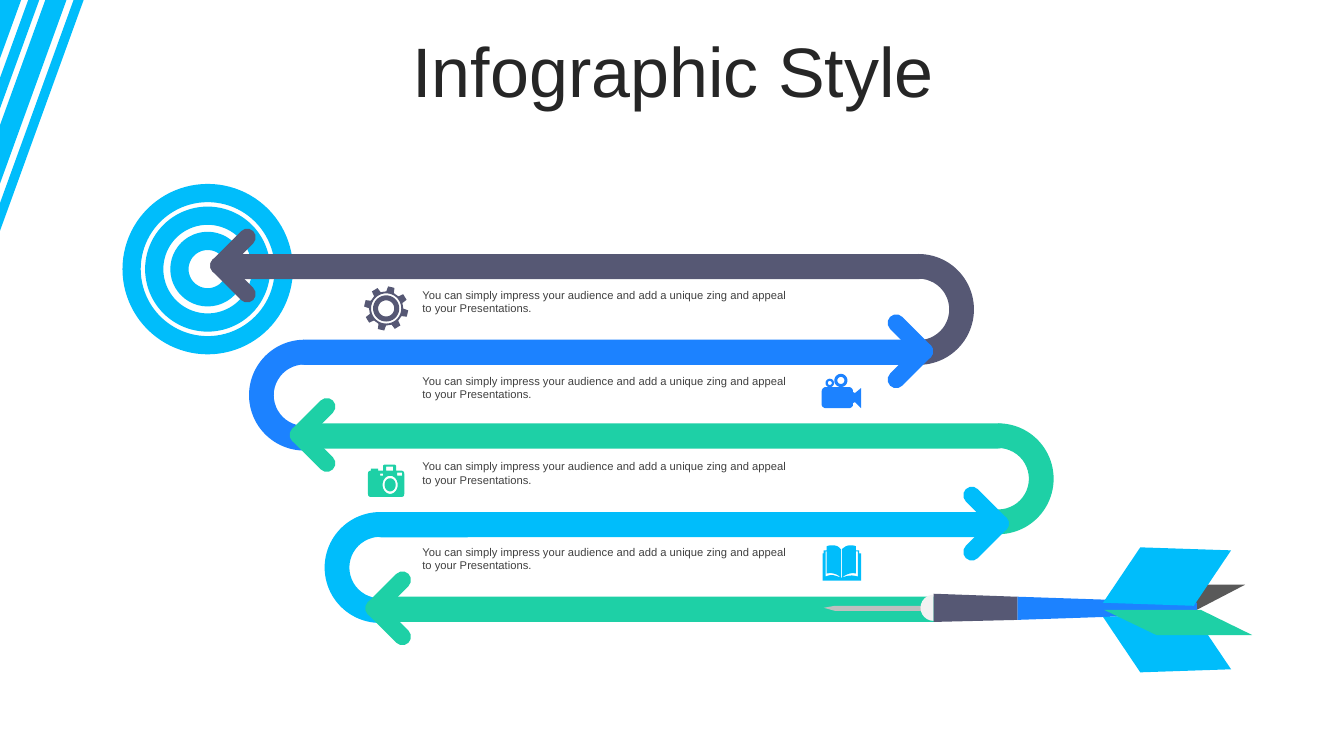
import math

import pptx
import pptx.util
from pptx.dml.color import RGBColor
from pptx.enum.shapes import MSO_SHAPE
from pptx.enum.text import MSO_ANCHOR, PP_ALIGN

COLORS = {
    "sky": "00BDFB", "blue": "1C82FF", "green": "1ED0A6", "slate": "565874",
    "grey": "595959", "silver": "BFBFBF", "pale": "F2F2F2", "white": "FFFFFF",
    "title": "262626", "body": "404040",
}
CAPTION = ("You can simply impress your audience and add a unique zing "
           "and appeal to your Presentations.")
BAR = 0.25
BEND = 1.1
# colour, tip x, tail x, top y, direction of the arrow, has a bend at its tail
RIBBONS = [
    ("slate", 2.14, 9.23, 2.52, -1, True),
    ("blue", 9.2, 2.9, 3.37, 1, True),
    ("green", 2.93, 10.02, 4.2, -1, True),
    ("sky", 9.95, 3.65, 5.08, 1, True),
    ("green", 3.68, 9.4, 5.92, -1, False),
]


def inch(value):
    return pptx.util.Inches(value)


def rgb(name):
    return RGBColor.from_string(COLORS[name])


def paint(sp, color, line=None, width=0):
    sp.shadow.inherit = False
    sp.fill.solid()
    sp.fill.fore_color.rgb = rgb(color)
    if line:
        sp.line.color.rgb = rgb(line)
        sp.line.width = pptx.util.Pt(width)
    else:
        sp.line.fill.background()


def preset(s, kind, box, color, rotation=0, adjust=(), **line):
    sp = s.shapes.add_shape(kind, *map(inch, box))
    sp.rotation = rotation
    for i, value in enumerate(adjust):
        sp.adjustments[i] = value
    paint(sp, color, **line)
    return sp


def flatten(points, steps=6):
    """Turn six-number cubic curves into short lines."""
    flat = []
    for pt in points:
        if len(pt) == 2:
            flat.append(pt)
            continue
        knots = [flat[-1], pt[:2], pt[2:4], pt[4:]]
        for i in range(1, steps + 1):
            t = i / steps
            weights = ((1 - t) ** 3, 3 * t * (1 - t) ** 2, 3 * t * t * (1 - t), t ** 3)
            flat.append(tuple(sum(w * k[axis] for w, k in zip(weights, knots))
                              for axis in (0, 1)))
    return flat


def outline(s, x, y, color, *contours):
    """Fill contours given in hundredths of an inch from x, y; inner ones are holes."""
    builder = None
    for contour in contours:
        pts = [(inch(x + px / 100), inch(y + py / 100)) for px, py in flatten(contour)]
        if builder is None:
            builder = s.shapes.build_freeform(*pts[0])
        else:
            builder.move_to(*pts[0])
        builder.add_line_segments(pts[1:], close=True)
    paint(builder.convert_to_shape(), color)


def polar(cx, cy, rx, ry, degrees):
    a = math.radians(degrees)
    return cx + rx * math.cos(a), cy + ry * math.sin(a)


def ring(cx, cy, rx, ry=None):
    return [polar(cx, cy, rx, ry or rx, a) for a in range(0, 360, 10)]


def rect(x, y, w, h):
    return [(x, y), (x + w, y), (x + w, y + h), (x, y + h)]


def write(tf, text, size, color, align=PP_ALIGN.LEFT, anchor=MSO_ANCHOR.TOP, spacing=1.0):
    tf.word_wrap = True
    tf.vertical_anchor = anchor
    p = tf.paragraphs[0]
    p.alignment = align
    p.line_spacing = spacing
    r = p.add_run()
    r.text = text
    r.font.size = pptx.util.Pt(size)
    r.font.name = "Arial"
    r.font.color.rgb = rgb(color)


def heading(s, x, y, w, h):
    sp = s.shapes.title
    sp.left, sp.top, sp.width, sp.height = map(inch, (x, y, w, h))
    write(sp.text_frame, "Infographic Style", 50, "title",
          align=PP_ALIGN.CENTER, anchor=MSO_ANCHOR.MIDDLE, spacing=0.8)


def corner_stripes(s, x, y, slope=2.76):
    bands = [(0, 21), (28, 39), (45, 66), (73, 83)]
    outline(s, x, y, "sky", *[
        [(a, 0), (b, 0), (0, b * slope), (0, a * slope)] for a, b in bands])


def target(s, cx, cy):
    for d in (1.51, 1.06, 0.56):
        preset(s, MSO_SHAPE.OVAL, (cx - d / 2, cy - d / 2, d, d), "white",
               line="sky", width=13)


def ribbon(s, color, tip, tail, top, direction, bend):
    if bend:
        left = tail + 0.12 * direction - BEND / 2
        preset(s, MSO_SHAPE.BLOCK_ARC, (left, top, BEND, BEND), color,
               rotation=-90 * direction % 360, adjust=(108, 0, 0.223))
    preset(s, MSO_SHAPE.ROUNDED_RECTANGLE,
           (min(tip, tail), top, abs(tip - tail), BAR), color, adjust=(0.5,))
    w, h = 0.17, 0.57
    cx, cy = tip - 0.17 * direction, top + BAR / 2 - 0.01
    for side in (-1, 1):
        preset(s, MSO_SHAPE.ROUNDED_RECTANGLE,
               (cx - w / 2, cy + 0.14 * side - h / 2, w, h), color,
               rotation=45 * side * direction % 360, adjust=(0.5,))


def gear(s, x, y):
    c = 21
    teeth = [polar(c, c, r, r, 45 * i - 76.5 + a) for i in range(8)
             for a, r in ((-13, 17), (-8.5, 22), (8.5, 22), (13, 17))]
    outline(s, x, y, "slate", teeth, *[ring(c, c, r) for r in (15, 13, 8)])


def movie_camera(s, x, y):
    body = [(4, 13), (27, 13), (29, 13, 31, 15, 31, 17), (31, 18), (33, 19), (39, 14),
            (39, 34), (33, 28), (31, 29), (31, 31), (31, 32, 29, 34, 27, 34), (4, 34),
            (2, 34, 0, 32, 0, 31), (0, 17), (0, 15, 2, 13, 4, 13)]
    outline(s, x, y, "blue", body, ring(8, 9, 4.2), ring(8, 9, 2),
            ring(19, 6.5, 6.5), ring(19, 6.5, 3.5))


def photo_camera(s, x, y):
    body = [(16, 0), (27, 0), (28, 1), (28, 6), (33, 6), (35, 6, 36, 7, 36, 9), (36, 29),
            (36, 31, 35, 32, 33, 32), (3, 32), (1, 32, 0, 31, 0, 29), (0, 9),
            (0, 7, 1, 6, 3, 6), (3, 4), (10, 4), (10, 6), (15, 6), (15, 1)]
    outline(s, x, y, "green", body, rect(12, 9, 3, 2), rect(29, 8, 5, 3),
            rect(18, 2, 7, 4), ring(22, 20, 7.5, 9), ring(22, 20, 5.5, 6.5))


def book(s, x, y):
    outline(s, x, y, "sky", [
        (18, 32), (19, 32), (25, 30, 28, 29, 35, 31), (35, 6), (33, 6), (33, 28),
        (29, 27, 24, 28, 19, 32), (19, 4), (22, 1, 24, 0, 28, 0), (29, 0, 31, 0, 33, 1),
        (33, 5), (36, 5), (36, 8), (38, 8), (38, 35), (0, 35), (0, 8), (1, 8), (1, 5),
        (4, 5), (4, 1), (6, 0, 8, 0, 10, 0), (13, 0, 16, 1, 18, 4), (18, 32),
        (14, 28, 9, 27, 4, 28), (4, 6), (3, 6), (3, 31), (9, 28, 12, 30, 18, 32)])


def captions(s, x, y, w, h, pitch):
    for i in range(4):
        box = s.shapes.add_textbox(*map(inch, (x, y + i * pitch, w, h)))
        write(box.text_frame, CAPTION, 8, "body")


def dart(s, x, y):
    """Draw the dart with the point of its needle at x, y."""
    fin = [(314, -60), (404, -57), (367, -2), (277, -5)]
    outline(s, x, y, "grey", [(325, -23), (418, -23), (370, 2), (277, 2)])
    outline(s, x, y, "silver", [(0, 0), (11, -2), (101, -2), (101, 3), (11, 3)])
    outline(s, x, y, "blue", [(192, -11), (370, -5), (370, 6), (192, 12)])
    preset(s, MSO_SHAPE.CHORD, (x + 0.96, y - 0.13, 0.26, 0.26), "pale",
           adjust=(54, 162))
    outline(s, x, y, "slate", [(109, -14), (192, -11), (192, 12), (109, 14)])
    outline(s, x, y, "sky", [(px, 4 - py) for px, py in fin])
    outline(s, x, y, "sky", fin)
    outline(s, x, y, "green", [(278, 2), (374, 2), (425, 27), (330, 27)])


def main():
    prs = pptx.Presentation()
    prs.slide_width, prs.slide_height = inch(13.33), inch(7.5)
    s = prs.slides.add_slide(prs.slide_layouts[5])
    corner_stripes(s, 0, 0)
    heading(s, 0.35, 0.37, 12.66, 0.79)
    target(s, 2.06, 2.67)
    gear(s, 3.62, 2.85)
    movie_camera(s, 8.15, 3.71)
    photo_camera(s, 3.65, 4.61)
    book(s, 8.16, 5.41)
    for row in RIBBONS:
        ribbon(s, *row)
    dart(s, 8.17, 6.03)
    captions(s, 4.09, 2.81, 3.89, 0.37, pitch=0.85)
    prs.save("out.pptx")


if __name__ == "__main__":
    main()
